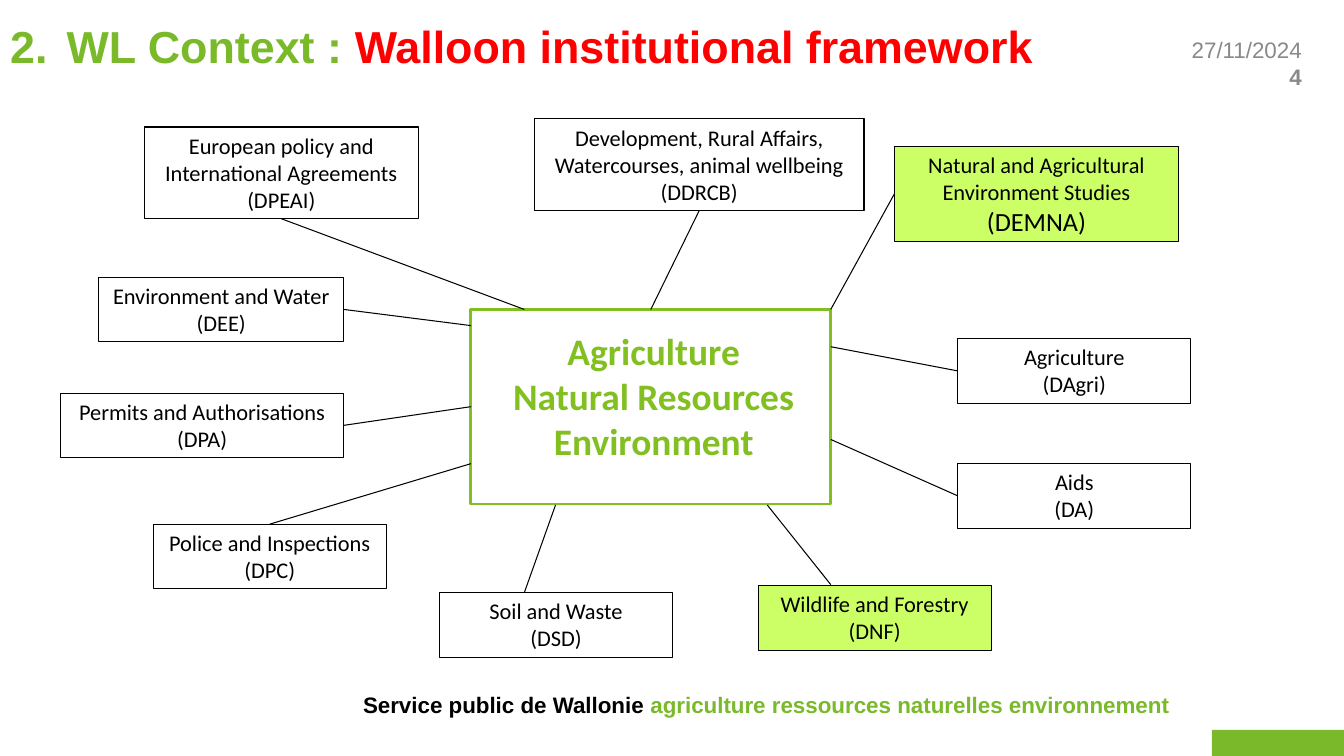
from dataclasses import dataclass
from typing import Optional

from lxml.etree import SubElement
from pptx import Presentation
from pptx.dml.color import RGBColor
from pptx.enum.shapes import MSO_CONNECTOR as Link, MSO_SHAPE as Preset
from pptx.enum.text import MSO_ANCHOR as Anchor, MSO_AUTO_SIZE as AutoSize, PP_ALIGN as Align
from pptx.oxml.ns import qn
from pptx.util import Emu, Pt

COLORS = {
    "black": "000000", "green": "7AB929", "hub": "82BF21",
    "lime": "CCFF66", "red": "FF0000", "grey": "898989",
}
TOP, LEFT, BOTTOM, RIGHT = range(4)


@dataclass
class Run:
    text: str
    color: Optional[str] = None
    size: Optional[float] = None
    bold: Optional[bool] = None


@dataclass
class Department:
    """A box, its joined side (or a free end point), and where its line meets the hub."""
    name: str
    code: str
    box: tuple[int, int, int, int]
    hub_point: tuple[int, int]
    side: Optional[int] = None
    free_end: tuple[int, int] = (0, 0)
    hub_side: Optional[int] = None
    fill: Optional[str] = None
    code_size: float = 16


DEPARTMENTS = [
    Department("Development, Rural Affairs, Watercourses, animal wellbeing", "(DDRCB)",
               (530, 118, 327, 91), (646, 307), BOTTOM, hub_side=TOP),
    Department("European policy and International Agreements", "(DPEAI)",
               (143, 126, 272, 91), (520, 307), BOTTOM),
    Department("Natural and Agricultural Environment Studies", "(DEMNA)",
               (887, 145, 282, 95), (824, 307), LEFT, fill="lime", code_size=18.7),
    Department("Agriculture", "(DAgri)", (950, 336, 231, 64), (824, 344), LEFT),
    Department("Aids", "(DA)", (950, 460, 231, 64), (824, 436), LEFT),
    Department("Wildlife and Forestry", "(DNF)", (752, 581, 231, 64), (761, 501),
               free_end=(824, 580), fill="lime"),
    Department("Soil and Waste", "(DSD)", (436, 588, 231, 64), (551, 501),
               free_end=(520, 588)),
    Department("Police and Inspections", "(DPC)", (152, 520, 231, 64), (467, 460), TOP),
    Department("Permits and Authorisations", "(DPA)", (60, 390, 281, 64), (467, 403),
               RIGHT, hub_side=LEFT),
    Department("Environment and Water", "(DEE)", (98, 275, 243, 64), (467, 323), RIGHT),
]


def px(length: int) -> Emu:
    """Scale of 100 px to the inch."""
    return Emu(length * 9144)


def rgb(color: str) -> RGBColor:
    return RGBColor.from_string(COLORS[color])


def write(frame, paragraphs: list[list[Run]], *, size: float = 16, font: str = "Calibri",
          color: str = "black", bold: bool = False, align=Align.CENTER,
          anchor=Anchor.TOP) -> None:
    frame.word_wrap = True
    frame.auto_size = AutoSize.NONE
    frame.vertical_anchor = anchor
    for index, runs in enumerate(paragraphs):
        paragraph = frame.add_paragraph() if index else frame.paragraphs[0]
        paragraph.alignment = align
        for part in runs:
            run = paragraph.add_run()
            run.text = part.text
            run.font.name = font
            run.font.size = Pt(part.size or size)
            run.font.bold = bold if part.bold is None else part.bold
            run.font.color.rgb = rgb(part.color or color)


def add_label(slide, box: tuple[int, int, int, int], paragraphs: list[list[Run]], **style) -> None:
    label = slide.shapes.add_textbox(*map(px, box))
    write(label.text_frame, paragraphs, **style)


def add_rectangle(slide, box: tuple[int, int, int, int], *, fill: Optional[str] = None,
                  line: Optional[str] = None, width: float = 0.75):
    rectangle = slide.shapes.add_shape(Preset.RECTANGLE, *map(px, box))
    rectangle.shadow.inherit = False
    if fill:
        rectangle.fill.solid()
        rectangle.fill.fore_color.rgb = rgb(fill)
    else:
        rectangle.fill.background()
    if line:
        rectangle.line.color.rgb = rgb(line)
        rectangle.line.width = Pt(width)
    else:
        rectangle.line.fill.background()
    return rectangle


def add_department(slide, hub, department: Department) -> None:
    """Draw the box and the line that ties it to the hub."""
    box = add_rectangle(slide, department.box, fill=department.fill, line="black")
    write(box.text_frame, [[Run(department.name)],
                           [Run(department.code, size=department.code_size)]])
    tie = slide.shapes.add_connector(
        Link.STRAIGHT, *map(px, department.free_end + department.hub_point))
    tie.line.color.rgb = rgb("black")
    tie.line.width = Pt(0.75)
    SubElement(tie._element.spPr, qn("a:effectLst"))
    if department.side is not None:
        tie.begin_connect(box, department.side)
    if department.hub_side is not None:
        tie.end_connect(hub, department.hub_side)


def add_title(slide) -> None:
    title = slide.shapes.title
    title.left, title.top, title.width, title.height = map(px, (0, 4, 1147, 83))
    properties = title.text_frame.paragraphs[0]._p.get_or_add_pPr()
    properties.set("marL", str(px(56)))
    properties.set("indent", str(px(-56)))
    SubElement(properties, qn("a:buFont"), typeface="+mj-lt")
    SubElement(properties, qn("a:buAutoNum"), type="arabicPeriod", startAt="2")
    write(title.text_frame,
          [[Run("WL Context : "), Run("Walloon institutional framework", "red")]],
          size=32, font="Arial", color="green", bold=True, align=Align.LEFT,
          anchor=Anchor.MIDDLE)


def main() -> None:
    deck = Presentation()
    deck.slide_width, deck.slide_height = px(1333), px(750)
    slide = deck.slides.add_slide(deck.slide_layouts[5])

    add_title(slide)
    add_label(slide, (1039, 31, 262, 79), [[Run("27/11/2024")], [Run("4", bold=True)]],
              font="Arial", color="grey", align=Align.RIGHT)
    add_rectangle(slide, (1202, 724, 131, 26), fill="green")
    add_label(slide, (0, 680, 1176, 37),
              [[Run("Service public de Wallonie "),
                Run("agriculture ressources naturelles environnement ", "green")]],
              font="Arial", bold=True, align=Align.RIGHT, anchor=Anchor.MIDDLE)

    hub = add_rectangle(slide, (467, 307, 357, 193), line="hub", width=2)
    add_label(slide, (470, 321, 357, 145),
              [[Run(topic)] for topic in ("Agriculture", "Natural Resources", "Environment")],
              size=26.7, color="hub", bold=True)
    for department in DEPARTMENTS:
        add_department(slide, hub, department)

    deck.save("out.pptx")


if __name__ == "__main__":
    main()
